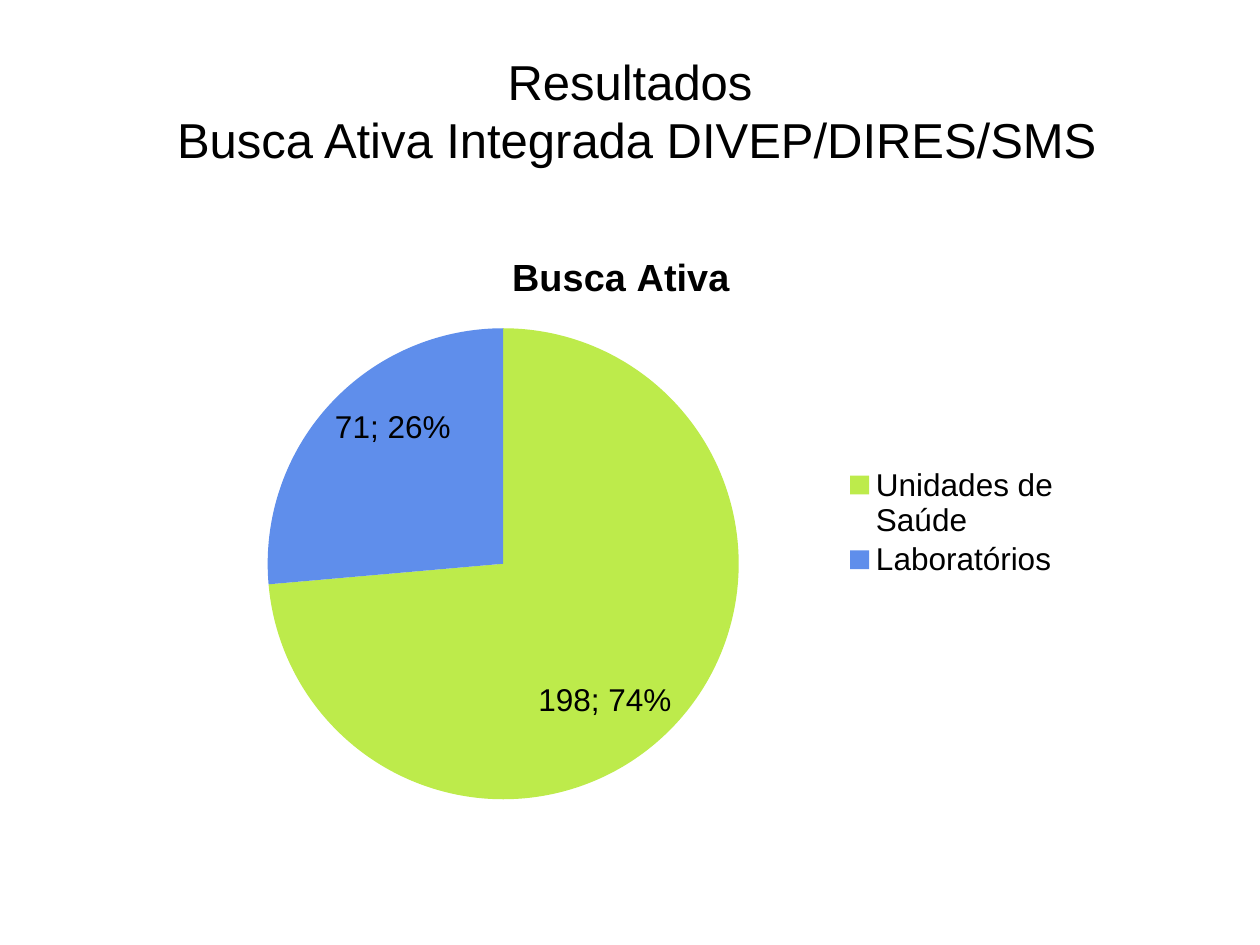
from lxml.etree import SubElement
from pptx import Presentation
from pptx.chart.data import CategoryChartData
from pptx.dml.color import RGBColor
from pptx.enum.chart import XL_CHART_TYPE as ChartType
from pptx.enum.chart import XL_LABEL_POSITION as LabelPosition
from pptx.enum.chart import XL_LEGEND_POSITION as LegendPosition
from pptx.enum.text import MSO_ANCHOR as Anchor
from pptx.enum.text import PP_ALIGN as Align
from pptx.oxml import parse_xml
from pptx.oxml.ns import nsdecls, qn
from pptx.util import Pt

PX = 914400 // 126
COLORS = {"text": "000000", "health_units": "BDEB4B", "laboratories": "5F8EEB"}


def manual_layout(x, y, w, h, target=None):
    """Chart layout in fractions of the chart area."""
    layout = parse_xml(f"<c:layout {nsdecls('c')}><c:manualLayout/></c:layout>")
    settings = [("xMode", "edge"), ("yMode", "edge"),
                ("x", x), ("y", y), ("w", w), ("h", h)]
    if target:
        settings.insert(0, ("layoutTarget", target))
    for name, value in settings:
        SubElement(layout[0], qn(f"c:{name}"), val=str(value))
    return layout


class SlideBuilder:
    font_name = "Arial"

    def __init__(self, page):
        self.page = page

    def style(self, font, size, bold=False):
        font.name = self.font_name
        font.size = Pt(size)
        font.bold = bold
        font.color.rgb = RGBColor.from_string(COLORS["text"])

    def title(self, text, left, top, width, height, size):
        box = self.page.shapes.add_textbox(
            *(n * PX for n in (left, top, width, height)))
        frame = box.text_frame
        frame.word_wrap = True
        frame.vertical_anchor = Anchor.TOP
        frame.margin_top = 13 * PX
        para = frame.paragraphs[0]
        para.text = text
        para.alignment = Align.CENTER
        self.style(para.font, size)

    def pie(self, name, slices, left, top, width, height, size, title_size):
        data = CategoryChartData()
        data.categories = [label for label, _, _ in slices]
        data.add_series(name, [value for _, value, _ in slices])
        chart = self.page.shapes.add_chart(
            ChartType.PIE, *(n * PX for n in (left, top, width, height)), data).chart
        self.style(chart.font, size)

        # Chart title
        chart.has_title = True
        para = chart.chart_title.text_frame.paragraphs[0]
        para.text = name
        self.style(para.font, title_size, bold=True)

        # Slices
        plot = chart.plots[0]
        plot.vary_by_categories = True
        for index, (_, _, color) in enumerate(slices):
            fill = plot.series[0].points[index].format.fill
            fill.solid()
            fill.fore_color.rgb = RGBColor.from_string(COLORS[color])

        # Value and percentage labels
        plot.has_data_labels = True
        labels = plot.data_labels
        labels.show_value = labels.show_percentage = True
        labels.position = LabelPosition.INSIDE_END
        self.style(labels.font, size)
        separator = parse_xml(f"<c:separator {nsdecls('c')}>; </c:separator>")
        plot_area = chart.element.find(".//" + qn("c:plotArea"))
        plot_area.find(".//" + qn("c:showBubbleSize")).addnext(separator)

        # Legend
        chart.has_legend = True
        legend = chart.legend
        legend.position = LegendPosition.RIGHT
        legend.include_in_layout = False
        self.style(legend.font, size)

        # Places of the pie and the legend
        legend_element = chart.element.find(".//" + qn("c:legend"))
        for parent in (plot_area, legend_element):
            for old in parent.findall(qn("c:layout")):
                parent.remove(old)
        plot_area.insert(0, manual_layout(0.11, 0.17, 0.52, 0.8, "inner"))
        legend_element.find(qn("c:legendPos")).addnext(
            manual_layout(0.74, 0.4, 0.25, 0.2))


def main():
    deck = Presentation()
    deck.slide_width, deck.slide_height = 1260 * PX, 945 * PX
    builder = SlideBuilder(deck.slides.add_slide(deck.slide_layouts[6]))

    # Heading
    builder.title("Resultados\v Busca Ativa Integrada DIVEP/DIRES/SMS",
                  63, 38, 1134, 157, size=28)

    # Active search by place
    slices = [("Unidades de Saúde", 198, "health_units"),
              ("Laboratórios", 71, "laboratories")]
    builder.pie("Busca Ativa", slices, 168, 227, 906, 591, size=18, title_size=21.6)

    deck.save("out.pptx")


if __name__ == "__main__":
    main()
